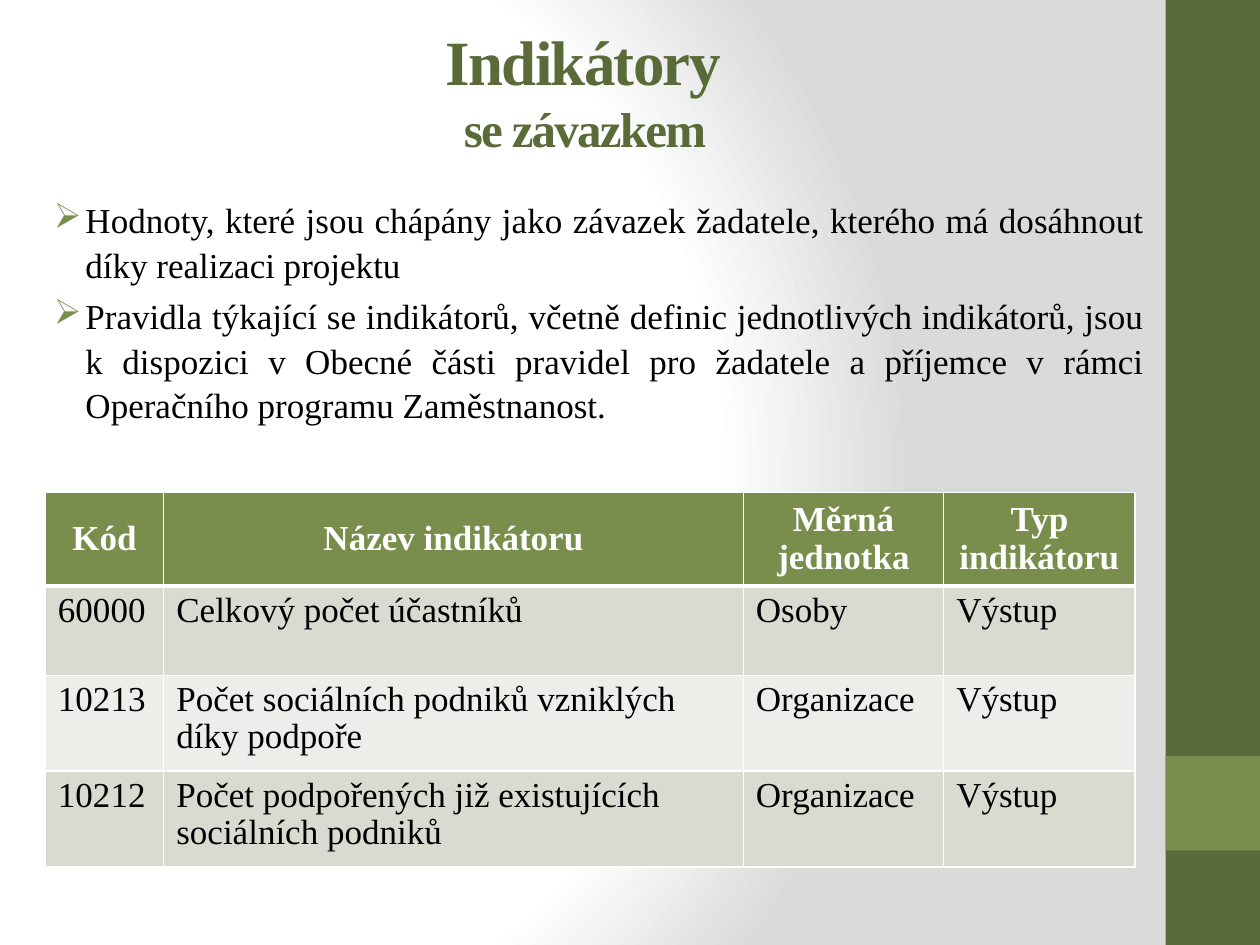
from dataclasses import dataclass

from lxml import etree
from pptx import Presentation
from pptx import util as u
from pptx.dml.color import RGBColor
from pptx.enum import shapes, text
from pptx.oxml import ns, parse_xml

Inches, Pt = u.Inches, u.Pt


@dataclass(frozen=True)
class Theme:
    font: str = "Times New Roman"
    dark: str = "5A6A39"
    green: str = "798E4C"
    band: str = "D7DBD0"
    pale: str = "ECEEE9"
    shade: str = "DADADA"
    white: str = "FFFFFF"
    black: str = "000000"
    title: int = 36
    subtitle: int = 28
    body: int = 20


THEME = Theme()

TITLE_LINES = ["Indikátory ", "se závazkem "]
BULLETS = [
    "Hodnoty, které jsou chápány jako závazek žadatele, kterého má dosáhnout "
    "díky realizaci projektu",
    "Pravidla týkající se indikátorů, včetně definic jednotlivých indikátorů, "
    "jsou k dispozici v Obecné části pravidel pro žadatele a příjemce "
    "v rámci Operačního programu Zaměstnanost.",
]
INDICATORS = [
    ["Kód", "Název indikátoru", "Měrná jednotka", "Typ indikátoru"],
    ["60000", "Celkový počet účastníků", "Osoby", "Výstup"],
    ["10213", "Počet sociálních podniků vzniklých díky podpoře", "Organizace", "Výstup"],
    ["10212", "Počet podpořených již existujících sociálních podniků", "Organizace", "Výstup"],
]
COLUMN_WIDTHS = [0.94, 4.6, 1.59, 1.52]
ROW_HEIGHTS = [0.71, 0.71, 0.76, 0.76]


def drawing_xml(body):
    """Parse one element of the DrawingML namespace, written with prefix a."""
    return parse_xml(body.replace(" ", f" {ns.nsdecls('a')} ", 1))


def style_runs(paragraph, size, color, bold=False):
    for run in paragraph.runs:
        run.font.name = THEME.font
        run.font.size = Pt(size)
        run.font.bold = bold
        run.font.color.rgb = RGBColor.from_string(color)


def add_background(slide):
    """Radial gradient, white in the middle and grey towards the right."""
    slide.background.fill.gradient()
    gradient = next(slide.element.iter(ns.qn("a:gradFill")))
    for child in list(gradient):
        gradient.remove(child)
    stops = [(0, THEME.white), (75, THEME.white), (100, THEME.shade)]
    stop_list = etree.SubElement(gradient, ns.qn("a:gsLst"))
    for position, color in stops:
        stop = etree.SubElement(stop_list, ns.qn("a:gs"), pos=str(position * 1000))
        etree.SubElement(stop, ns.qn("a:srgbClr"), val=color)
    circle = etree.SubElement(gradient, ns.qn("a:path"), path="circle")
    etree.SubElement(circle, ns.qn("a:fillToRect"),
                     l="20000", t="50000", r="100000", b="50000")


def add_side_bar(slide, left, top, width, height):
    """Dark bar with a lighter square one bar width above its foot."""
    square_top = top + height - 2 * width
    for y, part_height, color in [(top, height, THEME.dark),
                                  (square_top, width, THEME.green)]:
        shape = slide.shapes.add_shape(shapes.MSO_SHAPE.RECTANGLE, left, y, width, part_height)
        shape.shadow.inherit = False
        shape.fill.solid()
        shape.fill.fore_color.rgb = RGBColor.from_string(color)
        shape.line.fill.background()


def add_title(slide, left, top, width, height):
    frame = slide.shapes.add_textbox(left, top, width, height).text_frame
    frame.word_wrap = True
    frame.vertical_anchor = text.MSO_ANCHOR.MIDDLE
    paragraph = frame.paragraphs[0]
    paragraph.text = "\v".join(TITLE_LINES)
    paragraph.alignment = text.PP_ALIGN.CENTER
    style_runs(paragraph, THEME.title, THEME.dark, bold=True)
    paragraph.runs[1].font.size = Pt(THEME.subtitle)
    for run in paragraph.runs:
        run._r.get_or_add_rPr().set("spc", "-100")


def add_bullets(slide, left, top, width, height):
    frame = slide.shapes.add_textbox(left, top, width, height).text_frame
    frame.word_wrap = True
    frame.text = "\n".join(BULLETS)
    for paragraph in frame.paragraphs:
        paragraph.alignment = text.PP_ALIGN.JUSTIFY
        paragraph.line_spacing = 1.06
        paragraph.space_before = Pt(THEME.body * 0.2)
        style_runs(paragraph, THEME.body, THEME.black)
        properties = paragraph._p.get_or_add_pPr()
        properties.set("marL", str(Inches(0.38)))
        properties.set("indent", str(Inches(-0.25)))
        properties.append(drawing_xml(
            f'<a:buClr ><a:srgbClr val="{THEME.green}"/></a:buClr>'))
        properties.append(drawing_xml('<a:buChar char="➢"/>'))


def set_borders(cell, bottom):
    properties = cell._tc.get_or_add_tcPr()
    for index, (side, width) in enumerate([("L", 1), ("R", 1), ("T", 1), ("B", bottom)]):
        properties.insert(index, drawing_xml(
            f'<a:ln{side} w="{Pt(width)}"><a:solidFill>'
            f'<a:srgbClr val="{THEME.white}"/></a:solidFill></a:ln{side}>'))


def add_indicator_table(slide, left, top, width, height):
    table = slide.shapes.add_table(
        len(INDICATORS), len(COLUMN_WIDTHS), left, top, width, height).table
    for column, column_width in zip(table.columns, COLUMN_WIDTHS):
        column.width = Inches(column_width)
    for index, (row, row_height) in enumerate(zip(table.rows, ROW_HEIGHTS)):
        row.height = Inches(row_height)
        header = index == 0
        fill = THEME.green if header else THEME.band if index % 2 else THEME.pale
        for cell, label in zip(row.cells, INDICATORS[index]):
            cell.text = label
            cell.fill.solid()
            cell.fill.fore_color.rgb = RGBColor.from_string(fill)
            set_borders(cell, bottom=3 if header else 1)
            paragraph = cell.text_frame.paragraphs[0]
            paragraph.line_spacing = 0.96
            if header:
                cell.vertical_anchor = text.MSO_ANCHOR.MIDDLE
                paragraph.alignment = text.PP_ALIGN.CENTER
            style_runs(paragraph, THEME.body, THEME.white if header else THEME.black, header)


def main():
    presentation = Presentation()
    presentation.slide_width, presentation.slide_height = Inches(10), Inches(7.5)
    slide = presentation.slides.add_slide(presentation.slide_layouts[6])
    add_background(slide)
    add_side_bar(slide, Inches(9.25), 0, Inches(0.75), Inches(7.5))
    add_title(slide, Inches(0.52), Inches(0.21), Inches(8.33), Inches(1.01))
    add_indicator_table(slide, Inches(0.36), Inches(3.91),
                        Inches(sum(COLUMN_WIDTHS)), Inches(sum(ROW_HEIGHTS)))
    add_bullets(slide, Inches(0.2), Inches(1.51), Inches(8.98), Inches(1.85))
    presentation.save("out.pptx")


if __name__ == "__main__":
    main()
